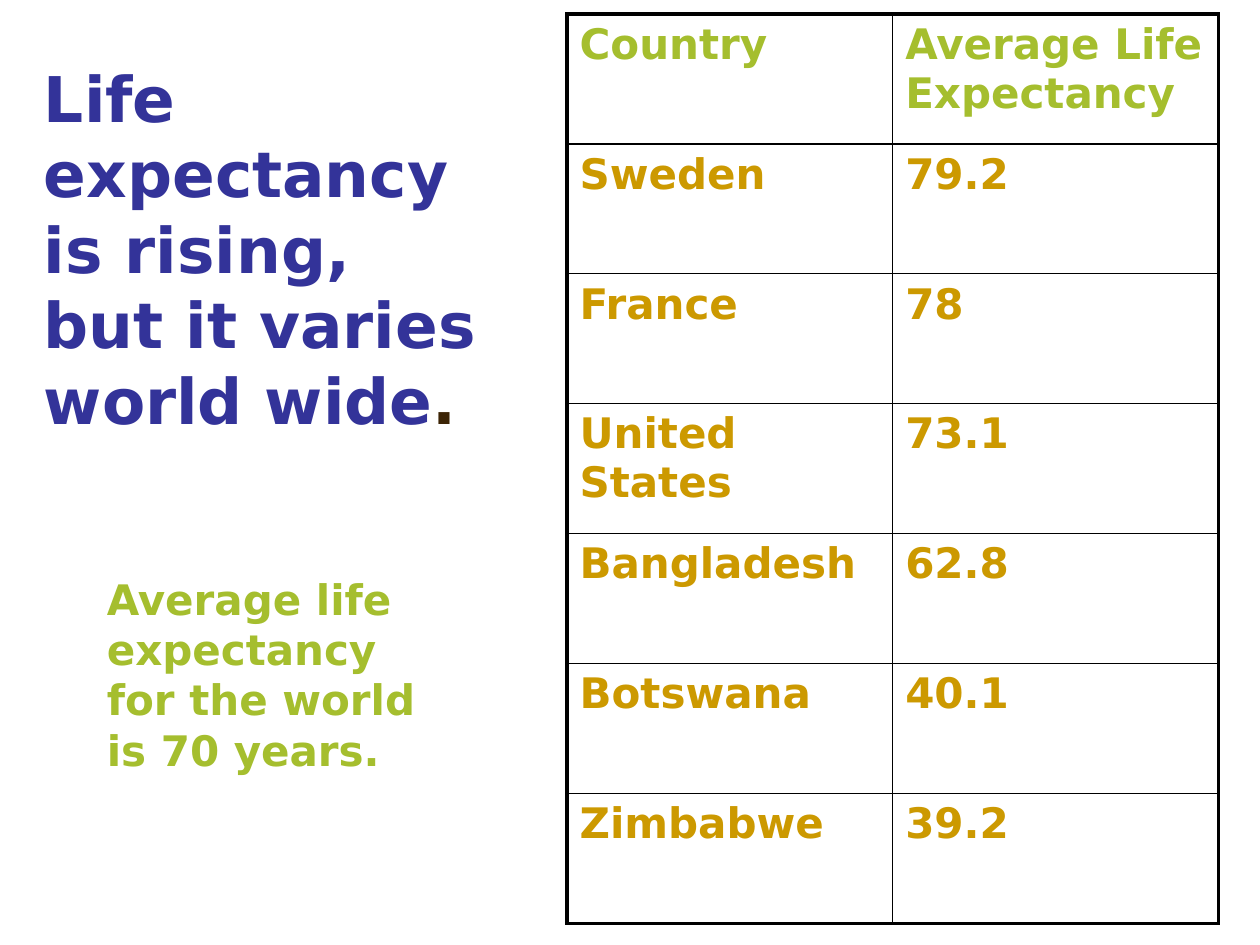
from lxml import etree
from pptx import Presentation
from pptx.dml.color import RGBColor
from pptx.enum.text import MSO_AUTO_SIZE
from pptx.oxml.ns import qn
from pptx.util import Inches, Pt

FIT_SHAPE = MSO_AUTO_SIZE.SHAPE_TO_FIT_TEXT

BLUE = RGBColor(0x33, 0x33, 0x99)
BROWN = RGBColor(0x3C, 0x24, 0x05)
GREEN = RGBColor(0xA5, 0xBE, 0x2E)
GOLD = RGBColor(0xCC, 0x99, 0x00)
BLACK = RGBColor(0, 0, 0)

FONT = {"name": "DejaVu Sans", "bold": True}
THIN, THICK = Pt(1), Pt(2.25)

LIFE_EXPECTANCY = [
    ("Country", "Average Life Expectancy"),
    ("Sweden", "79.2"),
    ("France", "78"),
    ("United States", "73.1"),
    ("Bangladesh", "62.8"),
    ("Botswana", "40.1"),
    ("Zimbabwe", "39.2"),
]


class SlideBuilder:
    def __init__(self, slide):
        self.slide = slide

    def add_run(self, p, text, size, color):
        r = p.add_run()
        r.text = text
        for key, value in {**FONT, "size": Pt(size)}.items():
            setattr(r.font, key, value)
        r.font.color.rgb = color

    def text(self, box, paragraphs, size, wrap):
        """Add a text box; each paragraph is a list of (text, colour) runs."""
        sp = self.slide.shapes.add_textbox(*map(Inches, box))
        tf = sp.text_frame
        tf.word_wrap = wrap
        tf.auto_size = FIT_SHAPE
        for i, runs in enumerate(paragraphs):
            p = tf.add_paragraph() if i else tf.paragraphs[0]
            for text, color in runs:
                self.add_run(p, text, size, color)

    def border(self, cell, widths):
        """Draw cell edges, with widths keyed L, R, T and B in that order."""
        tc_pr = cell._tc.get_or_add_tcPr()
        for side, width in widths.items():
            ln = etree.SubElement(tc_pr, qn(f"a:ln{side}"), w=str(width))
            fill = etree.SubElement(ln, qn("a:solidFill"))
            etree.SubElement(fill, qn("a:srgbClr"), val=str(BLACK))

    def table(self, box, rows, size):
        """Add a two-tone table with a thick frame and thin inner lines."""
        last_row, last_col = len(rows) - 1, len(rows[0]) - 1
        table = self.slide.shapes.add_table(
            len(rows), len(rows[0]), *map(Inches, box)).table
        for i, row in enumerate(rows):
            for j, text in enumerate(row):
                cell = table.cell(i, j)
                self.add_run(cell.text_frame.paragraphs[0], text, size,
                             GOLD if i else GREEN)
                outer = {"L": j == 0, "R": j == last_col,
                         "T": i == 0, "B": i == last_row}
                self.border(cell, {side: THICK if edge else THIN
                                   for side, edge in outer.items()})
                cell.fill.background()


def main():
    prs = Presentation()
    prs.slide_width, prs.slide_height = Inches(10), Inches(7.5)
    s = SlideBuilder(prs.slides.add_slide(prs.slide_layouts[6]))

    s.text((0.25, 0.42, 3.75, 3.1),
           [[("Life expectancy is rising,", BLUE)],
            [("but it varies world wide", BLUE), (".", BROWN)]],
           size=36, wrap=True)
    s.table((4.5, 0.11, 5.17, 7.22), LIFE_EXPECTANCY, size=24)
    world_average = ["Average life", "expectancy", "for the world", "is 70 years."]
    s.text((0.75, 4.5, 2.76, 1.7),
           [[(line, GREEN)] for line in world_average], size=24, wrap=False)

    prs.save("out.pptx")


if __name__ == "__main__":
    main()
